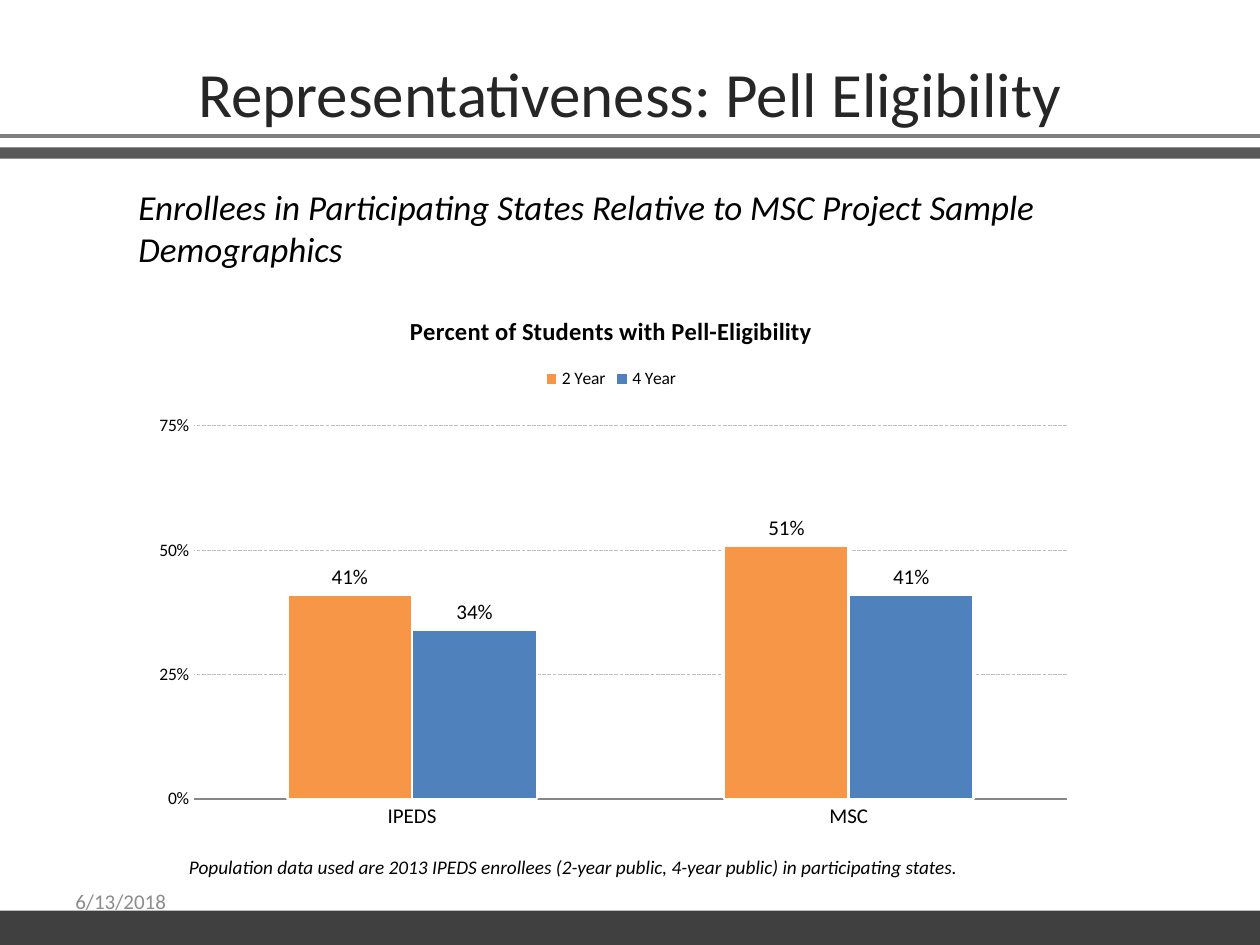
from lxml import etree
from pptx import Presentation
from pptx import util as u
from pptx.chart.data import CategoryChartData
from pptx.dml.color import RGBColor
from pptx.enum import chart as c, dml, shapes, text
from pptx.oxml import ns

FONT = "Calibri"
TITLE = "Representativeness: Pell Eligibility"
# text, (left, top, width, height) in cm, size, colour, italic, anchor
TEXTS = [
    ("Enrollees in Participating States Relative to MSC Project Sample Demographics",
     (2.54, 3.61, 20.96, 1.96), 20, "000000", True, text.MSO_ANCHOR.TOP),
    ("6/13/2018", (1.27, 17.65, 5.92, 1.02), 12, "8C8C8C", False, text.MSO_ANCHOR.MIDDLE),
    ("Population data used are 2013 IPEDS enrollees (2-year public, 4-year public) "
     "in participating states.",
     (3.56, 17.12, 19.48, 0.74), 11, "000000", True, text.MSO_ANCHOR.TOP),
]
BANDS = [((-0.05, 2.97, 25.45, 0.23), "595959"), ((0, 18.36, 25.43, 0.74), "404040")]
RULE_Y, RULE_END = 2.74, 25.43

CHART_TITLE = "Percent of Students with Pell-Eligibility"
CHART_BOX = (2.54, 5.89, 19.56, 11.23)
PLOT = {"x": 0.07, "y": 0.24, "w": 0.9, "h": 0.67}
CATEGORIES = ["IPEDS", "MSC"]
SERIES = [("2 Year", (0.41, 0.51), "F79646"), ("4 Year", (0.34, 0.41), "4F81BD")]


def color(value):
    return RGBColor.from_string(value)


def cm(box):
    return [u.Cm(length) for length in box]


def style_font(font, size, value="000000", bold=False, italic=False):
    font.name, font.size, font.bold, font.italic = FONT, u.Pt(size), bold, italic
    font.color.rgb = color(value)


def style_line(line, value, width):
    line.color.rgb, line.width = color(value), u.Pt(width)


def write(shape, content, size, value, italic, anchor, align=text.PP_ALIGN.LEFT):
    frame = shape.text_frame
    frame.word_wrap = True
    frame.auto_size = text.MSO_AUTO_SIZE.NONE
    frame.vertical_anchor = anchor
    paragraph = frame.paragraphs[0]
    paragraph.alignment = align
    run = paragraph.add_run()
    run.text = content
    style_font(run.font, size, value, italic=italic)


def fix_plot_area(chart):
    """Pin the inner plot area to the fractions in PLOT."""
    plot_area = chart._chartSpace.chart.plotArea
    for old in plot_area.findall(ns.qn("c:layout")):
        plot_area.remove(old)
    layout = etree.Element(ns.qn("c:layout"))
    manual = etree.SubElement(layout, ns.qn("c:manualLayout"))
    settings = {"layoutTarget": "inner", "xMode": "edge", "yMode": "edge", **PLOT}
    for name, value in settings.items():
        etree.SubElement(manual, ns.qn(f"c:{name}")).set("val", str(value))
    plot_area.insert(0, layout)


def add_pell_chart(slide):
    data = CategoryChartData(number_format="0%")
    data.categories = CATEGORIES
    for name, values, _ in SERIES:
        data.add_series(name, values)
    chart = slide.shapes.add_chart(
        c.XL_CHART_TYPE.COLUMN_CLUSTERED, *cm(CHART_BOX), data).chart
    style_font(chart.font, 10)

    chart.has_title = True
    run = chart.chart_title.text_frame.paragraphs[0].add_run()
    run.text = CHART_TITLE
    style_font(run.font, 14, bold=True)
    chart.chart_title.include_in_layout = False
    chart.has_legend = True
    chart.legend.position = c.XL_LEGEND_POSITION.TOP
    chart.legend.include_in_layout = False
    style_font(chart.legend.font, 10)

    category_axis, value_axis = chart.category_axis, chart.value_axis
    for axis, size in ((category_axis, 12), (value_axis, 10)):
        axis.major_tick_mark = axis.minor_tick_mark = c.XL_TICK_MARK.NONE
        style_font(axis.tick_labels.font, size)
    style_line(category_axis.format.line, "868686", 0.75)
    value_axis.minimum_scale, value_axis.maximum_scale = 0, 0.75
    value_axis.major_unit = 0.25
    value_axis.tick_labels.number_format = "0%"
    value_axis.tick_labels.number_format_is_linked = False
    value_axis.format.line.fill.background()
    grid = value_axis.major_gridlines.format.line
    style_line(grid, "BFBFBF", 0.75)
    grid.dash_style = dml.MSO_LINE.SQUARE_DOT

    plot = chart.plots[0]
    plot.gap_width, plot.overlap = 150, 0
    plot.vary_by_categories = False
    for series, (_, _, fill) in zip(plot.series, SERIES):
        series.format.fill.solid()
        series.format.fill.fore_color.rgb = color(fill)
        style_line(series.format.line, "FFFFFF", 1.5)
        labels = series.data_labels
        labels.show_value = True
        labels.number_format, labels.number_format_is_linked = "0%", False
        labels.position = c.XL_LABEL_POSITION.OUTSIDE_END
        style_font(labels.font, 12)
    fix_plot_area(chart)


def main():
    presentation = Presentation()
    presentation.slide_width, presentation.slide_height = cm((25.4, 19.05))
    slide = presentation.slides.add_slide(presentation.slide_layouts[5])

    title = slide.shapes.title
    title.left, title.top, title.width, title.height = cm((0, 0.97, 25.4, 1.8))
    write(title, TITLE, 36, "262626", False, text.MSO_ANCHOR.TOP, text.PP_ALIGN.CENTER)

    for box, fill in BANDS:
        band = slide.shapes.add_shape(shapes.MSO_SHAPE.RECTANGLE, *cm(box))
        band.shadow.inherit = False
        band.fill.solid()
        band.fill.fore_color.rgb = color(fill)
        band.line.fill.background()

    rule = slide.shapes.add_connector(
        shapes.MSO_CONNECTOR.STRAIGHT, *cm((0, RULE_Y, RULE_END, RULE_Y)))
    style_line(rule.line, "808080", 2.25)
    etree.SubElement(rule._element.spPr, ns.qn("a:effectLst"))

    for content, box, *style in TEXTS:
        write(slide.shapes.add_textbox(*cm(box)), content, *style)

    add_pell_chart(slide)
    presentation.save("out.pptx")


if __name__ == "__main__":
    main()
